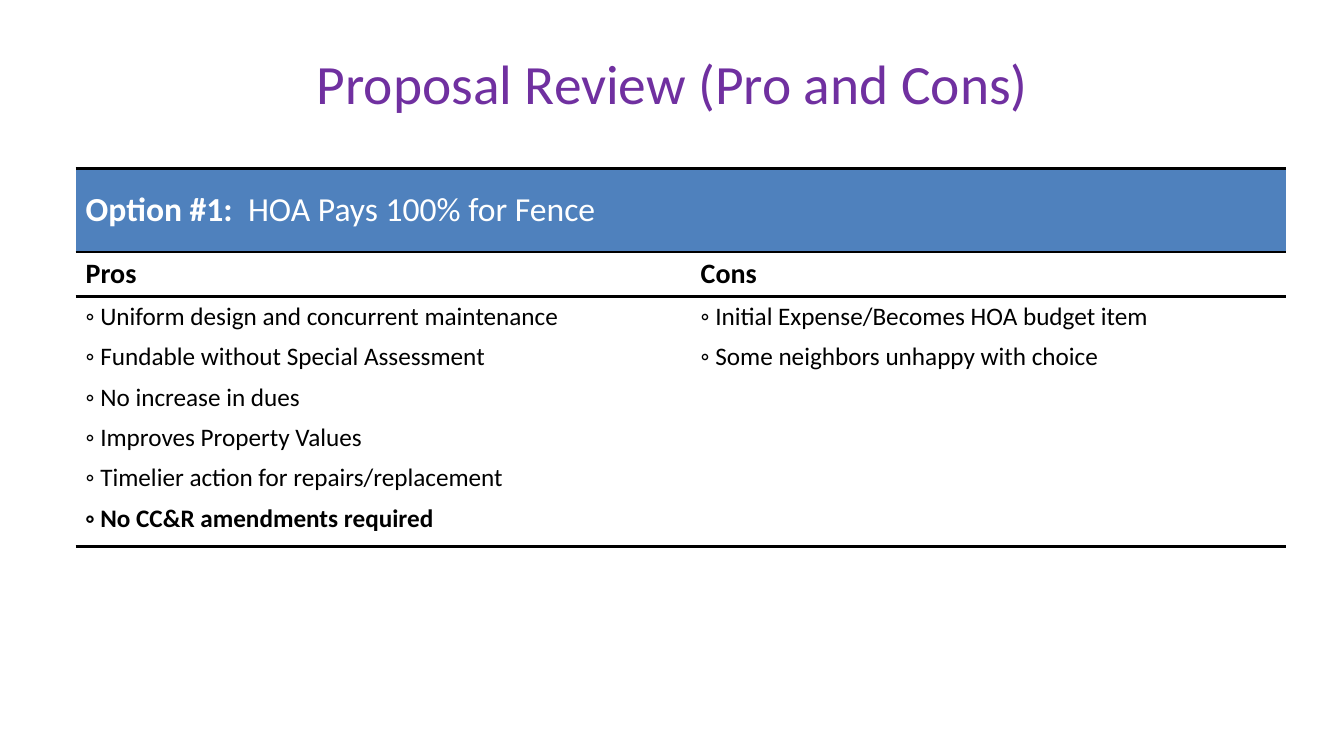
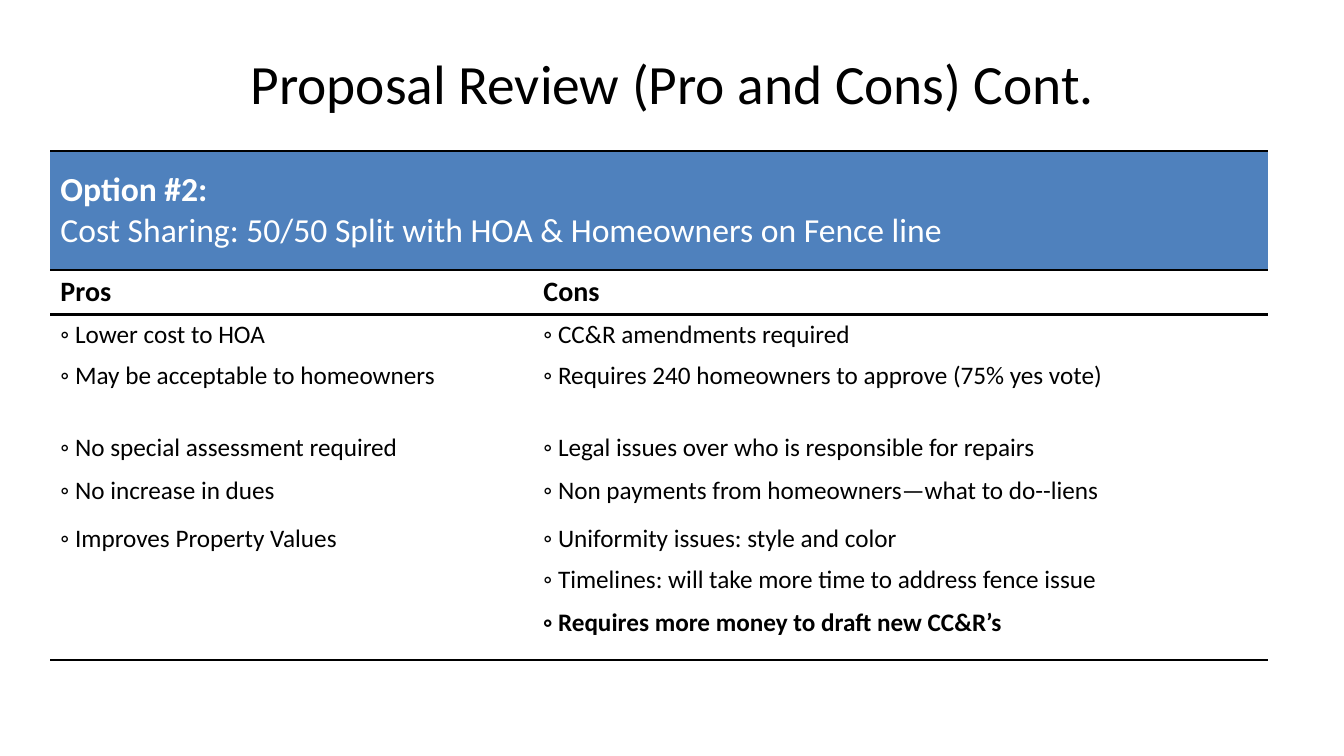
from lxml import etree
from pptx import Presentation
from pptx.dml.color import RGBColor
from pptx.enum.text import MSO_ANCHOR, PP_ALIGN
from pptx.oxml.ns import qn
from pptx.util import Inches, Pt

FONT = "Calibri"
PURPLE = RGBColor(0x70, 0x30, 0xA0)
BLUE = RGBColor(0x4F, 0x81, 0xBD)
BLACK = RGBColor(0, 0, 0)
WHITE = RGBColor(255, 255, 255)
PLAIN_TABLE_STYLE = "{2D5ABB26-0587-4C30-8999-92F81FD0307C}"

OPTIONS = [
    {
        "title": "Proposal Review (Pro and Cons)",
        "title_color": PURPLE,
        "label": "Option #1:",
        "summary": "HOA Pays 100% for Fence",
        "label_on_own_line": False,
        "corner": (0.75, 1.67),
        "columns": (6.1, 5.9),
        "rows": (0.83, 0.44, 0.4, 0.4, 0.4, 0.4, 0.4, 0.48),
        "pros": [
            "Uniform design and concurrent maintenance",
            "Fundable without Special Assessment",
            "No increase in dues",
            "Improves Property Values",
            "Timelier action for repairs/replacement",
            "No CC&R amendments required",
        ],
        "cons": [
            "Initial Expense/Becomes HOA budget item",
            "Some neighbors unhappy with choice",
        ],
    },
    {
        "title": "Proposal Review (Pro and Cons) Cont.",
        "title_color": BLACK,
        "label": "Option #2:",
        "summary": "Cost Sharing: 50/50 Split with HOA & Homeowners on Fence line",
        "label_on_own_line": True,
        "corner": (0.5, 1.5),
        "columns": (4.79, 7.29),
        "rows": (1.18, 0.44, 0.41, 0.71, 0.43, 0.47, 0.41, 0.43, 0.57),
        "pros": [
            "Lower cost to HOA",
            "May be acceptable to homeowners",
            "No special assessment required",
            "No increase in dues",
            "Improves Property Values",
        ],
        "cons": [
            "CC&R amendments required",
            "Requires 240 homeowners to approve (75% yes vote)",
            "Legal issues over who is responsible for repairs",
            "Non payments from homeowners—what to do--liens",
            "Uniformity issues: style and color",
            "Timelines: will take more time to address fence issue",
            "Requires more money to draft new CC&R’s",
        ],
    },
]


def style(font, size, color, bold=False):
    font.name = FONT
    font.size = Pt(size)
    font.color.rgb = color
    font.bold = bold


def finish_cell(cell, fill, *edges):
    """Fill a cell and rule the given edges ("lnT", "lnB") in black."""
    properties = cell._tc.get_or_add_tcPr()
    for edge in edges:
        line = etree.SubElement(properties, qn(f"a:{edge}"), w=str(Pt(2)))
        line_fill = etree.SubElement(line, qn("a:solidFill"))
        etree.SubElement(line_fill, qn("a:srgbClr"), val=str(BLACK))
    cell.fill.solid()
    cell.fill.fore_color.rgb = fill


prs = Presentation()
prs.slide_width = Inches(13.33)
prs.slide_height = Inches(7.5)

for option in OPTIONS:
    slide = prs.slides.add_slide(prs.slide_layouts[6])

    title = slide.shapes.add_textbox(
        Inches(2.17), Inches(0.42), Inches(9), Inches(0.8)).text_frame
    title.word_wrap = True
    title.vertical_anchor = MSO_ANCHOR.MIDDLE
    heading = title.paragraphs[0]
    heading.text = option["title"]
    heading.alignment = PP_ALIGN.CENTER
    style(heading.font, 39.6, option["title_color"])

    left, top = option["corner"]
    columns, rows = option["columns"], option["rows"]
    frame = slide.shapes.add_table(
        len(rows), len(columns), Inches(left), Inches(top),
        Inches(sum(columns)), Inches(sum(rows)))
    for style_id in frame.element.iter(qn("a:tableStyleId")):
        style_id.text = PLAIN_TABLE_STYLE
    table = frame.table
    table.first_row = table.horz_banding = False
    for column, width in zip(table.columns, columns):
        column.width = Inches(width)
    for row, height in zip(table.rows, rows):
        row.height = Inches(height)

    # Option band across both columns
    band = table.cell(0, 0)
    band.merge(table.cell(0, 1))
    band.vertical_anchor = MSO_ANCHOR.MIDDLE
    for cell in table.rows[0].cells:
        finish_cell(cell, BLUE, "lnT", "lnB")
    label_line = summary_line = band.text_frame.paragraphs[0]
    label = label_line.add_run()
    label.text = option["label"]
    if option["label_on_own_line"]:
        summary_line = band.text_frame.add_paragraph()
    else:
        label.text += "\t"
        tabs = etree.SubElement(label_line._p.get_or_add_pPr(), qn("a:tabLst"))
        etree.SubElement(tabs, qn("a:tab"), pos=str(Inches(1.61)), algn="l")
    summary = summary_line.add_run()
    summary.text = option["summary"]
    style(label.font, 24, WHITE, bold=True)
    style(summary.font, 24, WHITE)

    # Pros and cons, one point per row; the last row is bold and ruled off
    last = len(rows) - 1
    for col, (name, points) in enumerate(
            [("Pros", option["pros"]), ("Cons", option["cons"])]):
        lines = [name] + [f"◦ {point}" for point in points]
        for row in range(1, len(rows)):
            cell = table.cell(row, col)
            edges = {1: ["lnT"], last: ["lnB"]}.get(row, [])
            finish_cell(cell, WHITE, *edges)
            if row <= len(lines):
                cell.text = lines[row - 1]
                style(cell.text_frame.paragraphs[0].font,
                      20 if row == 1 else 18, BLACK, bold=row in (1, last))

prs.save("out.pptx")
